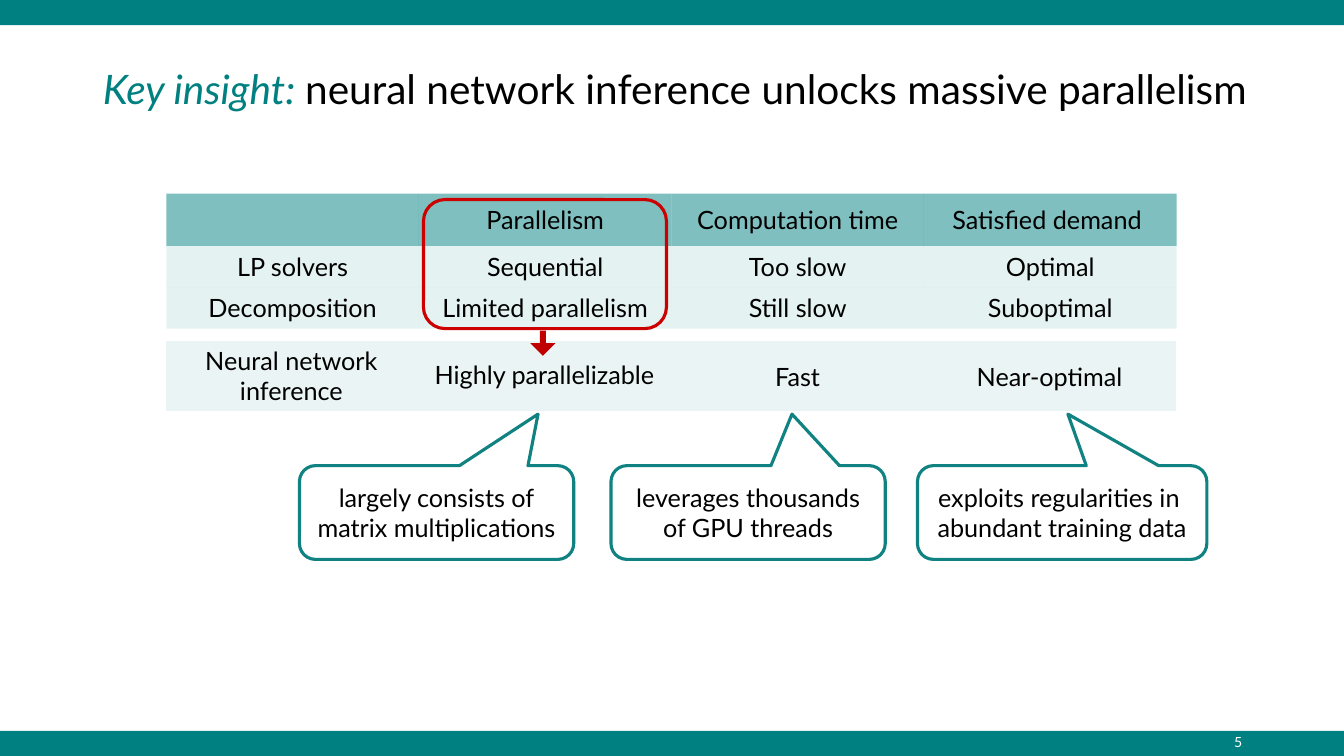
from lxml.etree import SubElement
from pptx import Presentation
from pptx.dml.color import RGBColor
from pptx.enum.shapes import MSO_SHAPE
from pptx.enum.text import MSO_ANCHOR, MSO_AUTO_SIZE, PP_ALIGN
from pptx.oxml.ns import qn
from pptx.util import Inches, Pt

TEAL, BLACK, WHITE = "008080", "000000", "FFFFFF"
NO_STYLE = "{2D5ABB26-0587-4C30-8999-92F81FD0307C}"


def color(value):
    return RGBColor.from_string(value)


class SlideBuilder:
    text_format = {"name": "Lato", "size": Pt(18), "bold": False}

    def __init__(self, page):
        self.page = page

    def style(self, span, text_color=BLACK, **changes):
        for name, value in {**self.text_format, **changes}.items():
            setattr(span.font, name, value)
        span.font.color.rgb = color(text_color)

    def set_text(self, frame, text, align=PP_ALIGN.CENTER, text_color=BLACK, **changes):
        para = frame.paragraphs[0]
        para.text, para.alignment = text, align
        for span in para.runs:
            self.style(span, text_color, **changes)

    def title(self, at, spans):
        box = self.page.shapes.title
        box.left, box.top, box.width, box.height = map(Inches, at)
        frame = box.text_frame
        frame.auto_size, frame.word_wrap = MSO_AUTO_SIZE.NONE, True
        frame.vertical_anchor = MSO_ANCHOR.MIDDLE
        para = frame.paragraphs[0]
        para.alignment, para.line_spacing = PP_ALIGN.LEFT, 0.9
        for text, text_color, italic in spans:
            span = para.add_run()
            span.text = text
            self.style(span, text_color, size=Pt(29), italic=italic)

    def label(self, at, text, **changes):
        frame = self.page.shapes.add_textbox(*map(Inches, at)).text_frame
        frame.word_wrap, frame.vertical_anchor = True, MSO_ANCHOR.MIDDLE
        self.set_text(frame, text, **changes)

    def shape(self, kind, at, fill=None, line=None, adjust=(), text=None):
        box = self.page.shapes.add_shape(kind, *map(Inches, at))
        box.shadow.inherit = False
        for index, value in enumerate(adjust):
            box.adjustments[index] = value
        if fill:
            box.fill.solid()
            box.fill.fore_color.rgb = color(fill)
        else:
            box.fill.background()
        if line:
            box.line.color.rgb = color(line)
            box.line.width = Pt(2.25)
        else:
            box.line.fill.background()
        if text:
            box.text_frame.word_wrap = True
            box.text_frame.vertical_anchor = MSO_ANCHOR.MIDDLE
            self.set_text(box.text_frame, text)

    def table(self, left, top, columns, heights, rows, fills):
        """Each fill is None or a pair of colour and opacity in percent."""
        size = map(Inches, (left, top, sum(columns), sum(heights)))
        table = self.page.shapes.add_table(len(rows), len(columns), *size).table
        table.first_row = table.horz_banding = False
        table._tbl.tblPr.find(qn("a:tableStyleId")).text = NO_STYLE
        for column, width in zip(table.columns, columns):
            column.width = Inches(width)
        for row, height, texts, fill in zip(table.rows, heights, rows, fills):
            row.height = Inches(height)
            for cell, text in zip(row.cells, texts):
                cell.vertical_anchor = MSO_ANCHOR.MIDDLE
                self.fill_cell(cell, fill)
                if text:
                    self.set_text(cell.text_frame, text)

    def fill_cell(self, cell, fill):
        if fill is None:
            cell.fill.background()
            return
        value, opacity = fill
        cell.fill.solid()
        cell.fill.fore_color.rgb = color(value)
        if opacity < 100:
            tint = cell._tc.tcPr.find(".//" + qn("a:srgbClr"))
            SubElement(tint, qn("a:alpha"), val=str(opacity * 1000))


def main():
    deck = Presentation()
    deck.slide_width, deck.slide_height = Inches(13.33), Inches(7.5)
    slide = SlideBuilder(deck.slides.add_slide(deck.slide_layouts[5]))

    # Bars, title and page number
    for top in (7.25, 0):
        slide.shape(MSO_SHAPE.RECTANGLE, (0, top, 13.33, 0.25), fill=TEAL)
    slide.title((0.92, 0.47, 11.76, 0.88), [
        ("Key insight: ", TEAL, True),
        ("neural network inference unlocks massive parallelism", BLACK, False),
    ])
    slide.label((9.42, 7.25, 3, 0.23), "5", align=PP_ALIGN.RIGHT,
                text_color=WHITE, size=Pt(10))

    # Existing methods
    slide.table(1.65, 1.92, [10.02 / 4] * 4, [0.52, 0.41, 0.41], [
        ["", "Parallelism", "Computation time", "Satisfied demand "],
        ["LP solvers", "Sequential", "Too slow", "Optimal"],
        ["Decomposition", "Limited parallelism", "Still slow", "Suboptimal"],
    ], [(TEAL, 50), (TEAL, 10), (TEAL, 10)])
    slide.shape(MSO_SHAPE.ROUNDED_RECTANGLE, (4.2, 1.98, 2.41, 1.28), line="CC0000")

    # Neural network row, with its values laid over the band
    slide.table(1.65, 3.38, [2.48, 2.53, 5], [0.7],
                [["Neural network\vinference", "", ""]], [("EBF4F4", 100)])
    for left, top, text in [
        (6.66, 3.39, "Fast"),
        (9.16, 3.39, "Near-optimal"),
        (4.15, 3.37, "Highly parallelizable"),
    ]:
        slide.table(left, top, [2.5], [0.7], [[text]], [None])
    slide.shape(MSO_SHAPE.DOWN_ARROW, (5.26, 3.28, 0.25, 0.25), fill="C00000",
                adjust=(0.24, 0.5))

    # Explanations
    for left, width, tip, text in [
        (2.97, 2.72, 0.37, "largely consists of\vmatrix multiplications"),
        (6.06, 2.72, 0.16, "leverages thousands\vof GPU threads"),
        (9.1, 2.87, 0.02, "exploits regularities in \vabundant training data"),
    ]:
        slide.shape(MSO_SHAPE.ROUNDED_RECTANGULAR_CALLOUT, (left, 4.62, width, 0.93),
                    line="0F8281", adjust=(tip, -1.05, 0.17), text=text)

    deck.save("out.pptx")


if __name__ == "__main__":
    main()
